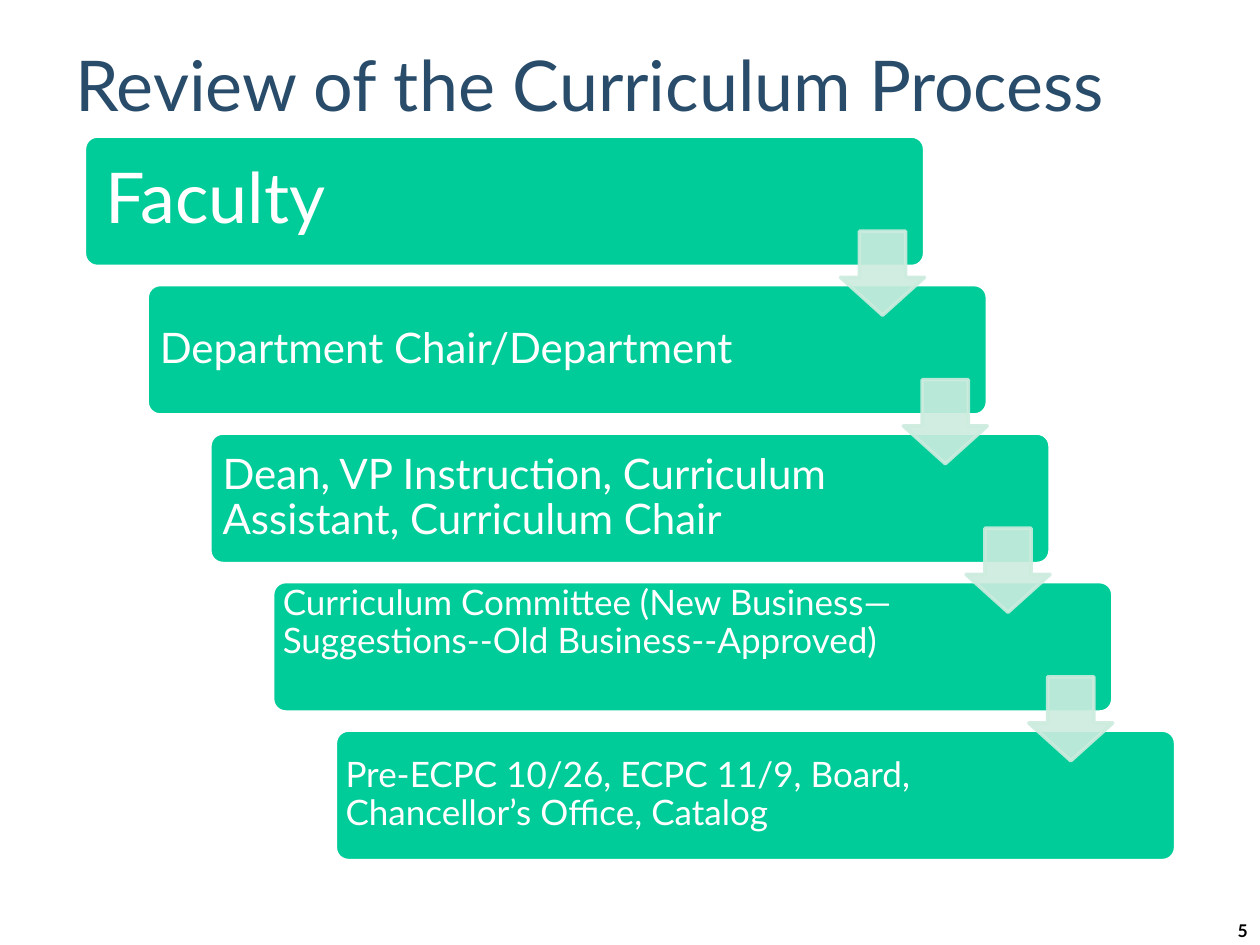
from lxml import etree
from pptx import Presentation
from pptx.dml.color import RGBColor
from pptx.enum.shapes import MSO_SHAPE as Preset
from pptx.enum.text import MSO_ANCHOR as Anchor, PP_ALIGN as Align
from pptx.oxml.ns import qn
from pptx.util import Inches, Pt

COLORS = {"title": "284C6A", "step": "00CC99", "arrow": "CCECDE",
          "white": "FFFFFF", "number": "000000"}
FONT = "Lato"

# Wording, text size, side inset, anchor
STEPS = [
    ("Faculty", 40, 0.14, Anchor.MIDDLE),
    ("Department Chair/Department", 24, 0.07, Anchor.MIDDLE),
    ("Dean, VP Instruction, Curriculum Assistant, Curriculum Chair",
     24, 0.07, Anchor.MIDDLE),
    ("Curriculum Committee (New Business—Suggestions--Old Business--Approved)",
     20, 0.05, Anchor.TOP),
    ("Pre-ECPC 10/26, ECPC 11/9, Board, Chancellor’s Office, Catalog",
     20, 0.05, Anchor.MIDDLE),
]


def rgb(name):
    return RGBColor.from_string(COLORS[name])


def write(shape, text, size, color, anchor=Anchor.TOP, align=Align.LEFT, bold=False):
    frame = shape.text_frame
    frame.word_wrap = True
    frame.vertical_anchor = anchor
    para = frame.paragraphs[0]
    para.text = text
    para.alignment = align
    font = para.font
    font.name, font.size, font.bold = FONT, Pt(size), bold
    font.color.rgb = rgb(color)
    return frame


def add_label(page, box, *args, **kwargs):
    write(page.shapes.add_textbox(*map(Inches, box)), *args, **kwargs)


def add_block(page, preset, box, adjustments, fill, line):
    shape = page.shapes.add_shape(preset, *map(Inches, box))
    shape.shadow.inherit = False
    for index, value in enumerate(adjustments):
        shape.adjustments[index] = value
    shape.fill.solid()
    shape.fill.fore_color.rgb = rgb(fill)
    shape.line.color.rgb = rgb(line)
    shape.line.width = Pt(2)
    return shape


def add_step(page, box, text, size, inset, anchor):
    shape = add_block(page, Preset.ROUNDED_RECTANGLE, box, [0.1], "step", "white")
    frame = write(shape, text, size, "white", anchor)
    frame.paragraphs[0].line_spacing = 0.9
    frame.margin_left = Inches(inset)
    # The right part of each step stays free for its arrow
    frame.margin_right = Inches(box[2] * 0.175 + inset)
    frame.margin_top = frame.margin_bottom = 0


def add_arrow(page, box):
    shape = add_block(page, Preset.DOWN_ARROW, box, [0.45, 0.55], "arrow", "arrow")
    # Python-pptx orders arrow adjustments as head length, then shaft width
    shape.adjustments[0], shape.adjustments[1] = 0.55, 0.45
    for color in shape.element.spPr.iter(qn("a:srgbClr")):
        etree.SubElement(color, qn("a:alpha"), val="90000")


def add_staircase(page, box):
    left, top, width, height = box
    step_width, step_height = width * 0.77, height * 0.18
    shift = (width - step_width) / (len(STEPS) - 1)
    pitch = (height - step_height) / (len(STEPS) - 1)
    arrow = step_width * 0.1
    corners = [(left + row * shift, top + row * pitch) for row in range(len(STEPS))]

    for (x, y), step in zip(corners, STEPS):
        add_step(page, (x, y, step_width, step_height), *step)
    # Arrows lie over the gaps, flush with the right edge of the step above
    for x, y in corners[:-1]:
        add_arrow(page, (x + step_width - arrow, y + step_height * 0.73, arrow, arrow))


def main():
    deck = Presentation()
    deck.slide_width, deck.slide_height = Inches(10), Inches(7.5)
    page = deck.slides.add_slide(deck.slide_layouts[6])
    # Title
    add_label(page, (0.5, 0.25, 8.83, 0.83), "Review of the Curriculum Process",
              40, "title", Anchor.MIDDLE)
    # Approval steps
    add_staircase(page, (0.67, 1.08, 8.66, 5.75))
    # Page number
    add_label(page, (7.92, 7.25, 2.08, 0.25), "5", 10, "number",
              align=Align.RIGHT, bold=True)
    deck.save("out.pptx")


if __name__ == "__main__":
    main()
